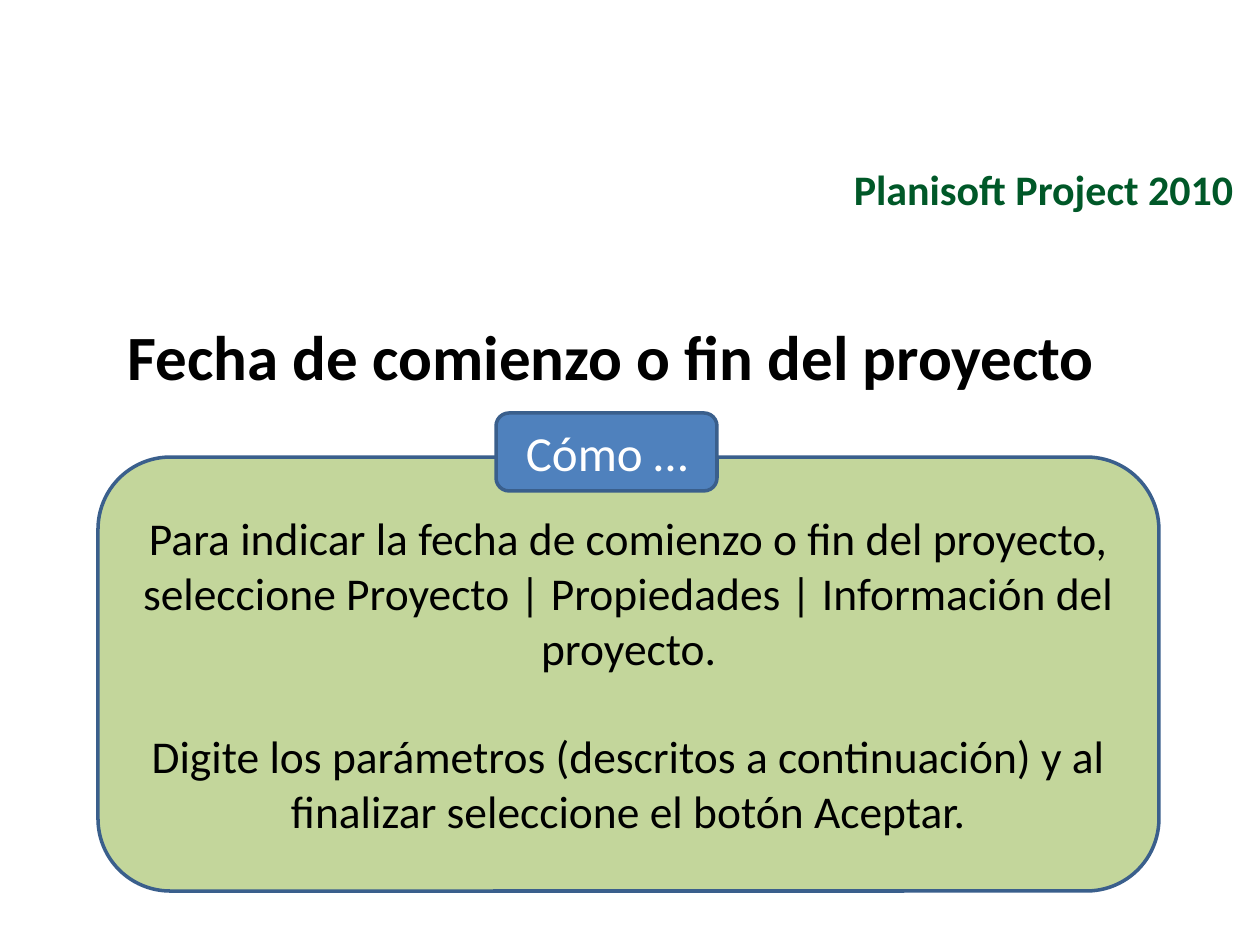
from dataclasses import dataclass
from typing import Optional

from pptx import Presentation
from pptx.dml.color import RGBColor
from pptx.enum.shapes import MSO_SHAPE
from pptx.enum.text import MSO_ANCHOR, PP_ALIGN
from pptx.util import Emu, Pt

SCALE = 914400 / 126


def px(n: int) -> Emu:
    return Emu(round(n * SCALE))


@dataclass(frozen=True)
class Theme:
    font: str = "Calibri"
    ink: str = "000000"
    white: str = "FFFFFF"
    brand: str = "005828"
    panel: str = "C3D69B"
    badge: str = "4F81BD"
    edge: str = "3A5F8C"
    line: float = 2
    title: float = 36
    body: float = 26
    label: float = 28
    head: float = 24
    gap: float = 31


THEME = Theme()


@dataclass(frozen=True)
class Block:
    box: tuple[int, int, int, int]
    lines: tuple[str, ...]
    size: float
    color: str
    fill: Optional[str] = None
    bold: bool = False
    align: PP_ALIGN = PP_ALIGN.CENTER
    anchor: MSO_ANCHOR = MSO_ANCHOR.MIDDLE
    inset: int = 13


BLOCKS = (
    Block((52, 311, 1144, 354), ("Fecha de comienzo o fin del proyecto",),
          THEME.title, THEME.ink, bold=True, align=PP_ALIGN.LEFT,
          anchor=MSO_ANCHOR.TOP, inset=76),
    Block((98, 457, 1061, 434),
          ("Para indicar la fecha de comienzo o fin del proyecto, seleccione "
           "Proyecto | Propiedades | Información del proyecto.",
           "Digite los parámetros (descritos a continuación) y al finalizar "
           "seleccione el botón Aceptar."),
          THEME.body, THEME.ink, THEME.panel),
    Block((496, 413, 221, 78), ("Cómo …",),
          THEME.label, THEME.white, THEME.badge),
    Block((679, 145, 567, 87), ("Planisoft Project 2010",),
          THEME.head, THEME.brand, bold=True, align=PP_ALIGN.RIGHT),
)


def apply(target, values: dict) -> None:
    for name, value in values.items():
        setattr(target, name, value)


def write(frame, block: Block) -> None:
    apply(frame, {"word_wrap": True, "vertical_anchor": block.anchor,
                  "margin_left": px(block.inset)})
    for i, line in enumerate(block.lines):
        para = frame.add_paragraph() if i else frame.paragraphs[0]
        para.alignment = block.align
        if i:
            para.space_before = Pt(THEME.gap)
        run = para.add_run()
        run.text = line
        apply(run.font, {"name": THEME.font, "size": Pt(block.size),
                         "bold": block.bold})
        run.font.color.rgb = RGBColor.from_string(block.color)


def draw(slide, block: Block) -> None:
    """Draw a rounded panel when the block has a fill, else a text box."""
    box = [px(n) for n in block.box]
    if block.fill:
        shape = slide.shapes.add_shape(MSO_SHAPE.ROUNDED_RECTANGLE, *box)
        shape.shadow.inherit = False
        shape.fill.solid()
        shape.fill.fore_color.rgb = RGBColor.from_string(block.fill)
        shape.line.color.rgb = RGBColor.from_string(THEME.edge)
        shape.line.width = Pt(THEME.line)
    else:
        shape = slide.shapes.add_textbox(*box)
    write(shape.text_frame, block)


def main() -> None:
    deck = Presentation()
    apply(deck, {"slide_width": px(1260), "slide_height": px(945)})
    slide = deck.slides.add_slide(deck.slide_layouts[6])
    for block in BLOCKS:
        draw(slide, block)
    deck.save("out.pptx")


if __name__ == "__main__":
    main()
